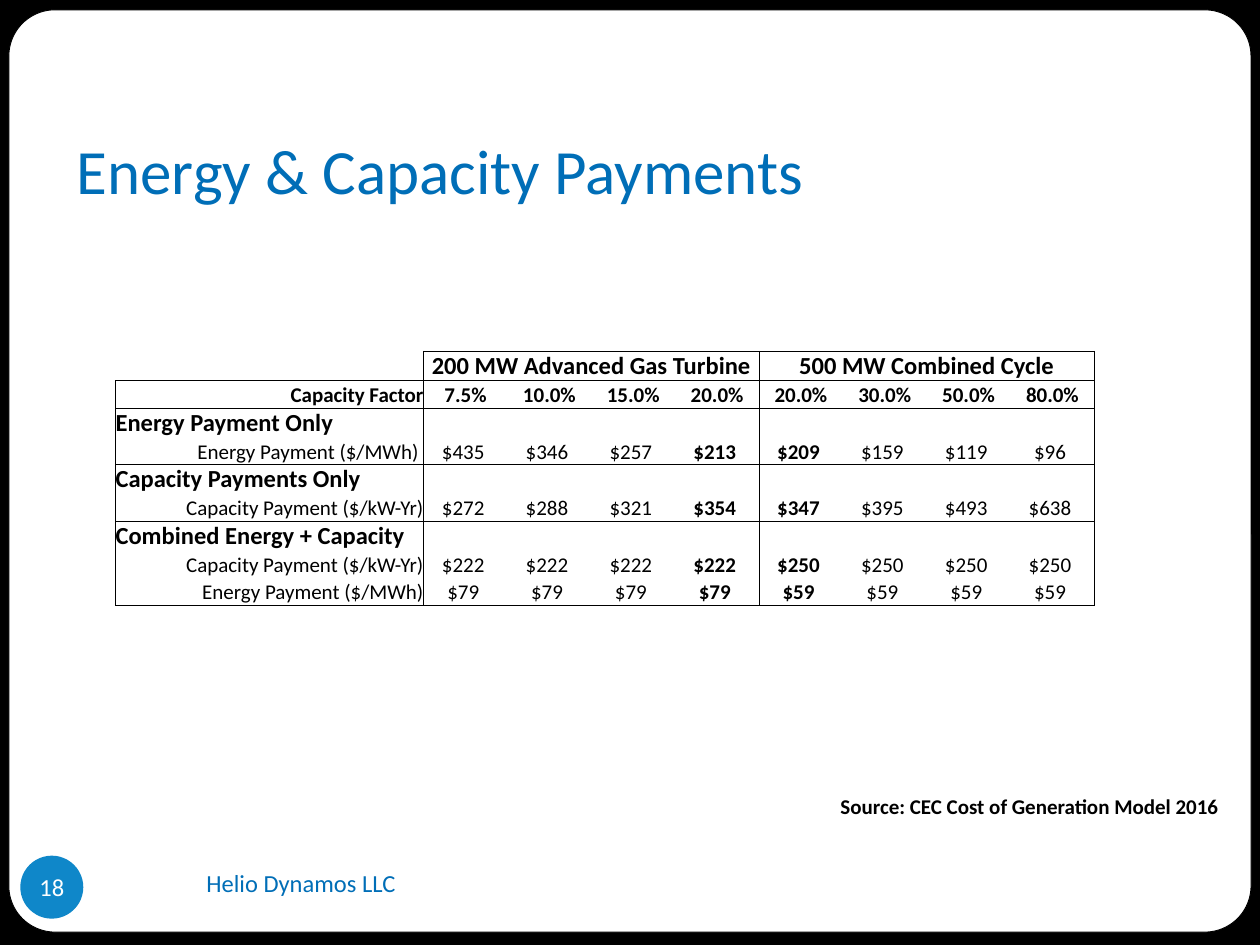
from lxml import etree
from pptx import Presentation
from pptx.dml.color import RGBColor
from pptx.enum.shapes import MSO_SHAPE
from pptx.enum.text import MSO_ANCHOR, MSO_AUTO_SIZE, PP_ALIGN
from pptx.oxml.ns import qn
from pptx.util import Cm, Pt

RECT, ROUND, OVAL = MSO_SHAPE.RECTANGLE, MSO_SHAPE.ROUNDED_RECTANGLE, MSO_SHAPE.OVAL
LEFT, MID, RIGHT = PP_ALIGN.LEFT, PP_ALIGN.CENTER, PP_ALIGN.RIGHT
TOP, CENTER, BASE = MSO_ANCHOR.TOP, MSO_ANCHOR.MIDDLE, MSO_ANCHOR.BOTTOM
GROW = MSO_AUTO_SIZE.SHAPE_TO_FIT_TEXT
BLACK, WHITE, BLUE, DISC = "000000", "FFFFFF", "006EB7", "0F87C9"
FONT = "Calibri"

# Table content: one label and eight values per row
ROWS = [
    ["", "200 MW Advanced Gas Turbine", "", "", "", "500 MW Combined Cycle", "", "", ""],
    ["Capacity Factor", "7.5%", "10.0%", "15.0%", "20.0%", "20.0%", "30.0%", "50.0%", "80.0%"],
    ["Energy Payment Only"] + [""] * 8,
    ["Energy Payment ($/MWh) ", "$435 ", "$346 ", "$257 ", "$213 ",
     "$209 ", "$159 ", "$119 ", "$96 "],
    ["Capacity Payments Only"] + [""] * 8,
    ["Capacity Payment ($/kW-Yr)", "$272 ", "$288 ", "$321 ", "$354 ",
     "$347 ", "$395 ", "$493 ", "$638 "],
    ["Combined Energy + Capacity"] + [""] * 8,
    ["Capacity Payment ($/kW-Yr)"] + ["$222 "] * 4 + ["$250 "] * 4,
    ["Energy Payment ($/MWh)"] + ["$79 "] * 4 + ["$59 "] * 4,
]
HEADS = (0, 2, 4, 6)        # rows set in the larger size
BANDS = (0, 1, 2, 4, 6, 9)  # row lines, top to bottom
PARTS = (0, 1, 5, 9)        # column lines, left to right
SPANS = (1, 5)              # merged heads, four columns each


def hue(code):
    return RGBColor.from_string(code)


def write(frame, text, size=12, color=BLACK, bold=False, align=LEFT):
    para = frame.paragraphs[0]
    para.alignment = align
    if not text:  # keeps an empty cell from growing its row
        etree.SubElement(para._p, qn("a:endParaRPr"), sz=str(size * 100))
        return
    run = para.add_run()
    run.text = text
    font = run.font
    font.name, font.size, font.bold = FONT, Pt(size), bold
    font.color.rgb = hue(color)


def edge(cell, side, shown):
    line = etree.SubElement(cell._tc.get_or_add_tcPr(), qn("a:ln" + side), w="6350")
    if shown:
        fill = etree.SubElement(line, qn("a:solidFill"))
        etree.SubElement(fill, qn("a:srgbClr"), val=BLACK)
    else:
        etree.SubElement(line, qn("a:noFill"))


class Page:
    def __init__(self, deck):
        self.slide = deck.slides.add_slide(deck.slide_layouts[6])
        self.shapes = self.slide.shapes

    def shape(self, kind, box, fill, line=None, round=None):
        item = self.shapes.add_shape(kind, *map(Cm, box))
        item.shadow.inherit = False
        item.fill.solid()
        item.fill.fore_color.rgb = hue(fill)
        if line:
            item.line.color.rgb = hue(line)
            item.line.width = Pt(0.5)
        else:
            item.line.fill.background()
        if round is not None:
            item.adjustments[0] = round
        frame = item.text_frame
        frame.vertical_anchor = CENTER
        return frame

    def label(self, box, wrap=True, anchor=CENTER):
        frame = self.shapes.add_textbox(*map(Cm, box)).text_frame
        frame.word_wrap = wrap
        frame.vertical_anchor = anchor
        if not wrap:
            frame.auto_size = GROW
        return frame

    def table(self, box, first, rest, high):
        grid = self.shapes.add_table(len(ROWS), len(ROWS[0]), *map(Cm, box)).table
        grid.first_row = grid.horz_banding = False
        for c, col in enumerate(grid.columns):
            col.width = Cm(rest if c else first)
        for r, row in enumerate(grid.rows):
            row.height = Cm(high)
            for c, text in enumerate(ROWS[r]):
                self.cell(grid.cell(r, c), r, c, text)
        for c in SPANS:
            grid.cell(0, c).merge(grid.cell(0, c + 3))

    def cell(self, cell, r, c, text):
        cell.margin_left = cell.margin_right = 0
        cell.margin_top = cell.margin_bottom = 0
        cell.vertical_anchor = BASE
        # Lines follow the bands and parts; the corner stays open
        span = r == 0 and c in SPANS
        open_ = r == 0 and c == 0
        edge(cell, "L", c in PARTS and not open_)
        edge(cell, "R", c + 1 in PARTS or span)
        edge(cell, "T", r in BANDS and not open_)
        edge(cell, "B", r + 1 in BANDS)
        cell.fill.background()
        # Heads are large and bold, as are the two 20% columns
        head = r in HEADS
        align = MID if c else LEFT if head else RIGHT
        write(cell.text_frame, text, size=14 if head and text else 12,
              bold=head or r == 1 or c in (4, 5), align=align)


def main():
    deck = Presentation()
    deck.slide_width, deck.slide_height = Cm(25.4), Cm(19.05)
    page = Page(deck)

    # Frame
    page.shape(RECT, (0, 0, 25.4, 19.05), BLACK)
    page.shape(ROUND, (0.18, 0.2, 25.04, 18.59), WHITE, line=BLACK, round=0.05)

    # Title
    title = page.shape(ROUND, (1.3, 2.57, 22.86, 1.68), WHITE, round=0)
    write(title, "Energy & Capacity Payments", size=36, color=BLUE)

    # Page number and footer
    disc = page.shape(OVAL, (0.41, 17.25, 1.27, 1.27), DISC)
    disc.word_wrap = False
    disc.margin_left = disc.margin_right = disc.margin_top = disc.margin_bottom = 0
    write(disc, "18", size=14, color=WHITE, align=MID)
    foot = page.label((3.91, 17.15, 21.49, 1.27))
    write(foot, "Helio Dynamos LLC", size=14, color=BLUE)

    # Payments table
    page.table((2.33, 7.08, 19.73, 4.95), first=6.21, rest=1.69, high=0.55)

    # Source
    note = page.label((16.64, 15.88, 8.23, 0.76), wrap=False, anchor=TOP)
    write(note, "Source: CEC Cost of Generation Model 2016", bold=True, align=MID)

    deck.save("out.pptx")


if __name__ == "__main__":
    main()
